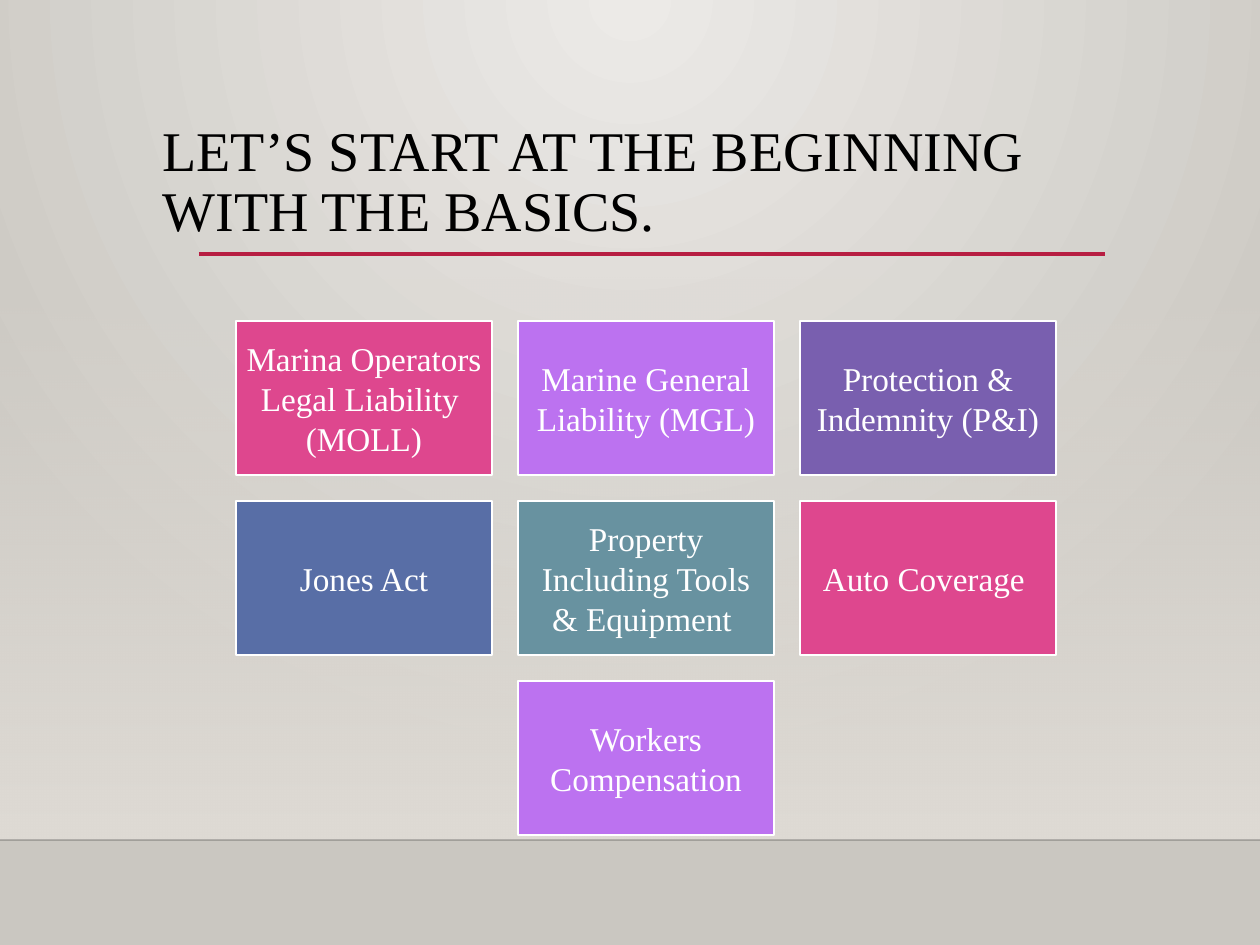
import pptx
import pptx.dml.color
import pptx.enum.shapes
import pptx.enum.text
import pptx.oxml.ns
import pptx.util
from lxml import etree

RGBColor = pptx.dml.color.RGBColor
MIDDLE = pptx.enum.text.MSO_ANCHOR.MIDDLE
ALIGN = pptx.enum.text.PP_ALIGN
RECTANGLE = pptx.enum.shapes.MSO_SHAPE.RECTANGLE
qn = pptx.oxml.ns.qn

EMU_PER_PX = 914400 / 126
SLIDE_WIDTH, SLIDE_HEIGHT = 1260, 945
FONT = "Times New Roman"

BLACK = RGBColor(0x00, 0x00, 0x00)
WHITE = RGBColor(0xFF, 0xFF, 0xFF)
FLOOR_LINE = RGBColor(0x00, 0x00, 0x01)
CRIMSON = RGBColor(0xB7, 0x1E, 0x42)
GLOW = RGBColor(0xEC, 0xEA, 0xE7)
STONE = RGBColor(0xCA, 0xC7, 0xC1)
SAND = RGBColor(0xDF, 0xDB, 0xD5)
PINK = RGBColor(0xDE, 0x47, 0x8E)
VIOLET = RGBColor(0xBC, 0x72, 0xF0)
PURPLE = RGBColor(0x79, 0x5F, 0xAF)
BLUE = RGBColor(0x58, 0x6E, 0xA6)
TEAL = RGBColor(0x68, 0x92, 0xA0)

TITLE = "LET’S START AT THE BEGINNING WITH THE BASICS."
COVERAGES = [
    # column, row, fill, label
    (0, 0, PINK, "Marina Operators Legal Liability  (MOLL)"),
    (1, 0, VIOLET, "Marine General Liability (MGL)"),
    (2, 0, PURPLE, "Protection & Indemnity (P&I)"),
    (0, 1, BLUE, "Jones Act"),
    (1, 1, TEAL, "Property Including Tools & Equipment "),
    (2, 1, PINK, "Auto Coverage "),
    (1, 2, VIOLET, "Workers Compensation"),
]
CARD_LEFT, CARD_TOP = 236, 321
CARD_WIDTH, CARD_HEIGHT = 256, 154
COLUMN_STEP, ROW_STEP = 282, 180
CARD_INSET = 10


def px(length):
    return pptx.util.Emu(round(length * EMU_PER_PX))


def apply(target, values):
    for name, value in values.items():
        setattr(target, name, value)


def set_stops(fill, *colors):
    fill.gradient()
    for position, (stop, color) in enumerate(zip(fill.gradient_stops, colors)):
        stop.position = position
        stop.color.rgb = color


def set_alpha(color_element, percent):
    etree.SubElement(color_element, qn("a:alpha"), val=str(percent * 1000))


def write_text(shape, text, size, color, frame_format, para_format):
    frame = shape.text_frame
    apply(frame, {"word_wrap": True, "vertical_anchor": MIDDLE, **frame_format})
    para = frame.paragraphs[0]
    apply(para, para_format)
    span = para.add_run()
    span.text = text
    apply(span.font, {"name": FONT, "size": pptx.util.Pt(size), "bold": False})
    span.font.color.rgb = color


def paint_background(slide):
    """Radial glow from the top centre."""
    set_stops(slide.background.fill, GLOW, STONE)
    gradient = next(slide.element.iter(qn("a:gradFill")))
    gradient.remove(gradient.find(qn("a:lin")))
    circle = etree.SubElement(gradient, qn("a:path"), path="circle")
    etree.SubElement(circle, qn("a:fillToRect"),
                     l="43000", t="0", r="43000", b="100000")


def add_wall(slide):
    """Band that fades in downwards, from clear to opaque sand."""
    wall = slide.shapes.add_shape(RECTANGLE, 0, px(277), px(SLIDE_WIDTH), px(563))
    wall.shadow.inherit = False
    set_stops(wall.fill, SAND, SAND)
    wall.fill.gradient_angle = 270
    set_alpha(next(wall.element.iter(qn("a:srgbClr"))), 0)
    wall.line.fill.background()


def add_rule(slide, left, right, y, color, width, alpha=100):
    rule = slide.shapes.add_connector(
        pptx.enum.shapes.MSO_CONNECTOR.STRAIGHT, px(left), px(y), px(right), px(y))
    rule.line.color.rgb = color
    rule.line.width = pptx.util.Pt(width)
    if alpha < 100:
        set_alpha(next(rule.element.iter(qn("a:srgbClr"))), alpha)
    etree.SubElement(rule.element.spPr, qn("a:effectLst"))


def place_title(slide):
    title = slide.shapes.title
    apply(title, {"left": px(150), "top": px(111),
                  "width": px(993), "height": px(145)})
    write_text(title, TITLE, 32, BLACK,
               {"auto_size": pptx.enum.text.MSO_AUTO_SIZE.NONE},
               {"alignment": ALIGN.LEFT, "line_spacing": 0.9})


def add_card(slide, column, row, color, label):
    card = slide.shapes.add_shape(
        RECTANGLE, px(CARD_LEFT + column * COLUMN_STEP),
        px(CARD_TOP + row * ROW_STEP), px(CARD_WIDTH), px(CARD_HEIGHT))
    card.shadow.inherit = False
    card.fill.solid()
    card.fill.fore_color.rgb = color
    card.line.color.rgb = WHITE
    card.line.width = pptx.util.Pt(1.25)
    sides = ("left", "top", "right", "bottom")
    write_text(card, label, 19, WHITE,
               {f"margin_{side}": px(CARD_INSET) for side in sides},
               {"alignment": ALIGN.CENTER})


def main():
    deck = pptx.Presentation()
    apply(deck, {"slide_width": px(SLIDE_WIDTH), "slide_height": px(SLIDE_HEIGHT)})
    slide = deck.slides.add_slide(deck.slide_layouts.get_by_name("Title Only"))
    paint_background(slide)
    add_wall(slide)
    add_rule(slide, 0, SLIDE_WIDTH, 840, FLOOR_LINE, 1, alpha=20)
    add_rule(slide, 199, 1105, 254, CRIMSON, 2.5)
    place_title(slide)
    for coverage in COVERAGES:
        add_card(slide, *coverage)
    deck.save("out.pptx")


if __name__ == "__main__":
    main()
